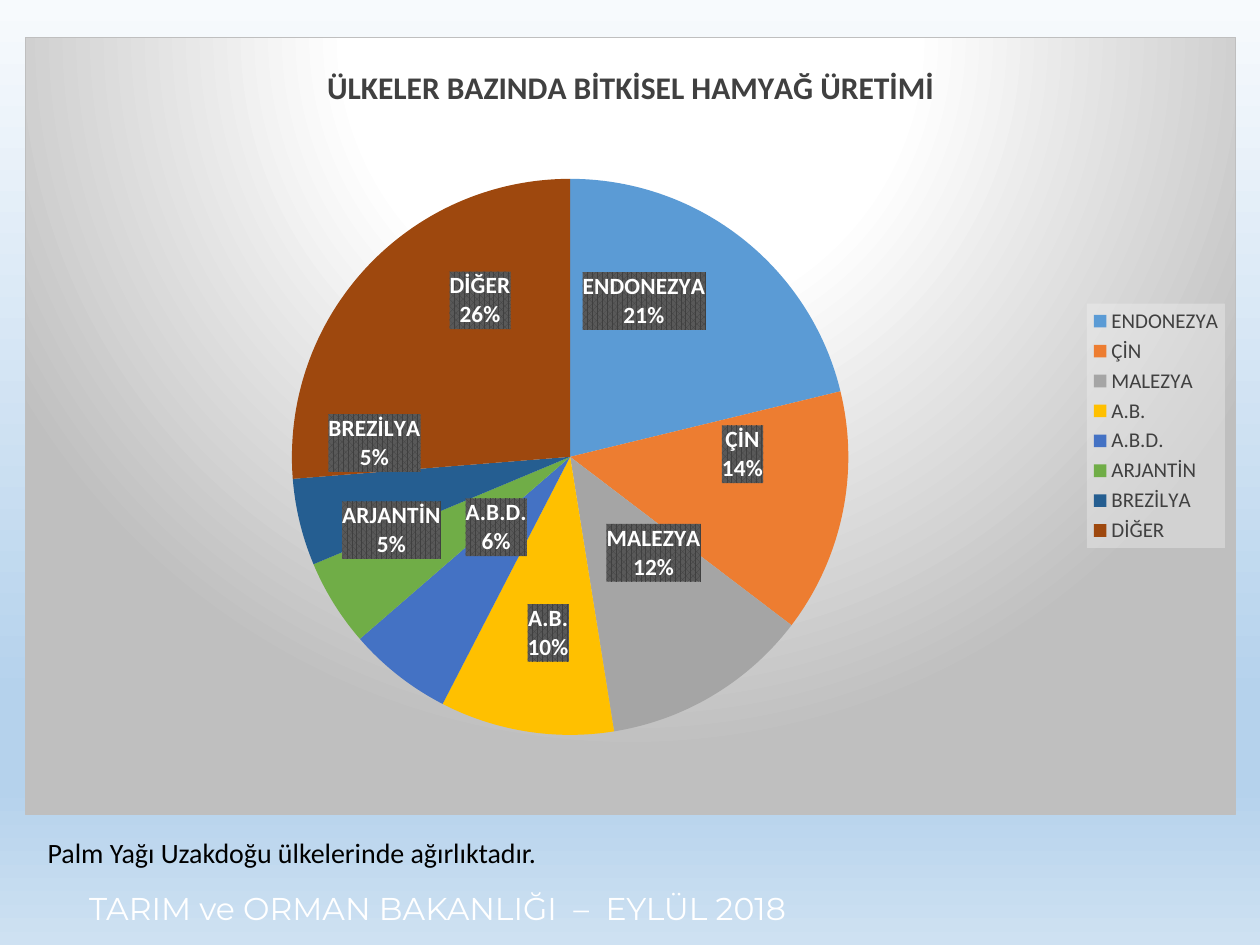
from lxml import etree
from pptx import Presentation
from pptx.chart.data import CategoryChartData
from pptx.dml.color import RGBColor
from pptx.enum.chart import XL_CHART_TYPE, XL_LABEL_POSITION, XL_LEGEND_POSITION
from pptx.oxml import parse_xml
from pptx.oxml.ns import nsdecls, qn
from pptx.util import Inches, Pt

PIE = XL_CHART_TYPE.PIE
CENTER = XL_LABEL_POSITION.CENTER
RIGHT = XL_LEGEND_POSITION.RIGHT

COLORS = {
    "white": "FFFFFF", "black": "000000", "dark": "404040", "label": "595959",
    "silver": "BFBFBF", "pale": "F2F2F2",
    "sky_top": "F7FAFD", "sky": "B5D2EC", "sky_bottom": "CEE1F2",
}

# country, share, slice colour, label shift as a fraction of the chart
COUNTRIES = [
    ("ENDONEZYA", 21, "5B9BD5", (-0.01, -0.06)),
    ("ÇİN", 14, "ED7D31", (0.03, -0.04)),
    ("MALEZYA", 12, "A5A5A5", (0.01, -0.03)),
    ("A.B.", 10, "FFC000", (0, 0.05)),
    ("A.B.D.", 6, "4472C4", (0.01, -0.05)),
    ("ARJANTİN", 5, "70AD47", (-0.05, 0)),
    ("BREZİLYA", 5, "255E91", (-0.05, -0.06)),
    ("DİĞER", 26, "9E480E", (0.01, -0.08)),
]


def gradient_xml(stops, direction):
    stop_xml = "".join(
        f'<a:gs pos="{pos * 1000}"><a:srgbClr val="{COLORS[color]}"/></a:gs>'
        for pos, color in stops)
    return (f'<a:gradFill {nsdecls("a")} rotWithShape="1">'
            f"<a:gsLst>{stop_xml}</a:gsLst>{direction}</a:gradFill>")


def shape_properties(content):
    return parse_xml(f'<c:spPr {nsdecls("c", "a")}>{content}</c:spPr>')


def manual_layout(**settings):
    items = "".join(f'<c:{tag} val="{value}"/>' for tag, value in settings.items())
    return parse_xml(f'<c:layout {nsdecls("c")}><c:manualLayout>{items}'
                     "</c:manualLayout></c:layout>")


class SlideBuilder:
    def __init__(self, slide, font):
        self.slide = slide
        self.font = font

    def style(self, font, size, color, bold=False, name=None):
        font.name = name or self.font
        font.size = Pt(size)
        font.bold = bold
        font.color.rgb = RGBColor.from_string(COLORS[color])

    def background(self, stops):
        self.slide.background.fill.solid()
        properties = self.slide._element.find(".//" + qn("p:bgPr"))
        gradient = gradient_xml(stops, '<a:lin ang="5400000" scaled="0"/>')
        properties.replace(properties[0], parse_xml(gradient))

    def text(self, words, box, size, color, name=None, wrap=True):
        frame = self.slide.shapes.add_textbox(*map(Inches, box)).text_frame
        frame.word_wrap = wrap
        paragraph = frame.paragraphs[0]
        paragraph.text = words
        self.style(paragraph.font, size, color, name=name)

    def pie(self, title, countries, box):
        data = CategoryChartData()
        data.categories = [country[0] for country in countries]
        data.add_series("Series 1", [country[1] for country in countries])
        chart = self.slide.shapes.add_chart(PIE, *map(Inches, box), data).chart
        self.style(chart.font, 10, "black")
        chart.has_title = True
        heading = chart.chart_title.text_frame.paragraphs[0]
        heading.text = title
        self.style(heading.font, 18, "dark", bold=True)
        chart.chart_title.include_in_layout = False

        plot = chart.plots[0]
        plot.vary_by_categories = True
        for index, (_, _, color, shift) in enumerate(countries):
            point = plot.series[0].points[index]
            point.format.fill.solid()
            point.format.fill.fore_color.rgb = RGBColor.from_string(color)
            self.slice_label(plot.series[0], index, shift)

        self.legend(chart)
        self.chart_area(chart)

    def slice_label(self, series, index, shift):
        """Show country and percentage on a patterned box, moved off centre."""
        label = series.points[index].data_label
        self.style(label.font, 13.3, "white", bold=True)
        label.position = CENTER
        element = series._element.findall(".//" + qn("c:dLbl"))[index]
        for tag, shown in (("showVal", 0), ("showCatName", 1), ("showPercent", 1)):
            element.find(qn(f"c:{tag}")).set("val", str(shown))
        etree.SubElement(element, qn("c:separator")).text = "\n"
        for old in element.findall(qn("c:spPr")):
            element.remove(old)
        element.find(qn("c:txPr")).addprevious(shape_properties(
            '<a:pattFill prst="pct75">'
            f'<a:fgClr><a:srgbClr val="{COLORS["dark"]}"/></a:fgClr>'
            f'<a:bgClr><a:srgbClr val="{COLORS["label"]}"/></a:bgClr>'
            "</a:pattFill><a:ln><a:noFill/></a:ln>"))
        element.find(qn("c:idx")).addnext(manual_layout(x=shift[0], y=shift[1]))

    def legend(self, chart):
        chart.has_legend = True
        chart.legend.position = RIGHT
        chart.legend.include_in_layout = False
        self.style(chart.legend.font, 12, "dark")
        chart.legend._element.find(qn("c:txPr")).addprevious(shape_properties(
            f'<a:solidFill><a:srgbClr val="{COLORS["pale"]}">'
            '<a:alpha val="39000"/></a:srgbClr></a:solidFill>'))

    def chart_area(self, chart):
        """Place the pie and give the chart its radial fill and border."""
        plot_area = chart._chartSpace.chart.plotArea
        for old in plot_area.findall(qn("c:layout")):
            plot_area.remove(old)
        plot_area.insert(0, manual_layout(
            layoutTarget="inner", xMode="edge", yMode="edge",
            x=0.22, y=0.18, w=0.46, h=0.72))
        radial = ('<a:path path="circle"><a:fillToRect l="50000" t="-80000" '
                  'r="50000" b="180000"/></a:path>')
        stops = [(0, "white"), (39, "white"), (100, "silver")]
        chart._chartSpace.chart.addnext(shape_properties(
            gradient_xml(stops, radial)
            + f'<a:ln w="9525"><a:solidFill><a:srgbClr val="{COLORS["silver"]}"/>'
            "</a:solidFill></a:ln>"))


def main():
    deck = Presentation()
    deck.slide_width, deck.slide_height = Inches(10), Inches(7.5)
    builder = SlideBuilder(deck.slides.add_slide(deck.slide_layouts[6]), "Calibri")
    builder.background([(0, "sky_top"), (74, "sky"), (83, "sky"), (100, "sky_bottom")])
    builder.text("TARIM ve ORMAN BAKANLIĞI  –  EYLÜL 2018",
                 (0.61, 7.01, 9.39, 0.4), 18, "white", name="Montserrat")
    builder.pie("ÜLKELER BAZINDA BİTKİSEL HAMYAĞ ÜRETİMİ", COUNTRIES,
                (0.2, 0.29, 9.61, 6.18))
    builder.text("Palm Yağı Uzakdoğu ülkelerinde ağırlıktadır.",
                 (0.28, 6.58, 4.17, 0.37), 16, "black", wrap=False)
    deck.save("out.pptx")


if __name__ == "__main__":
    main()
